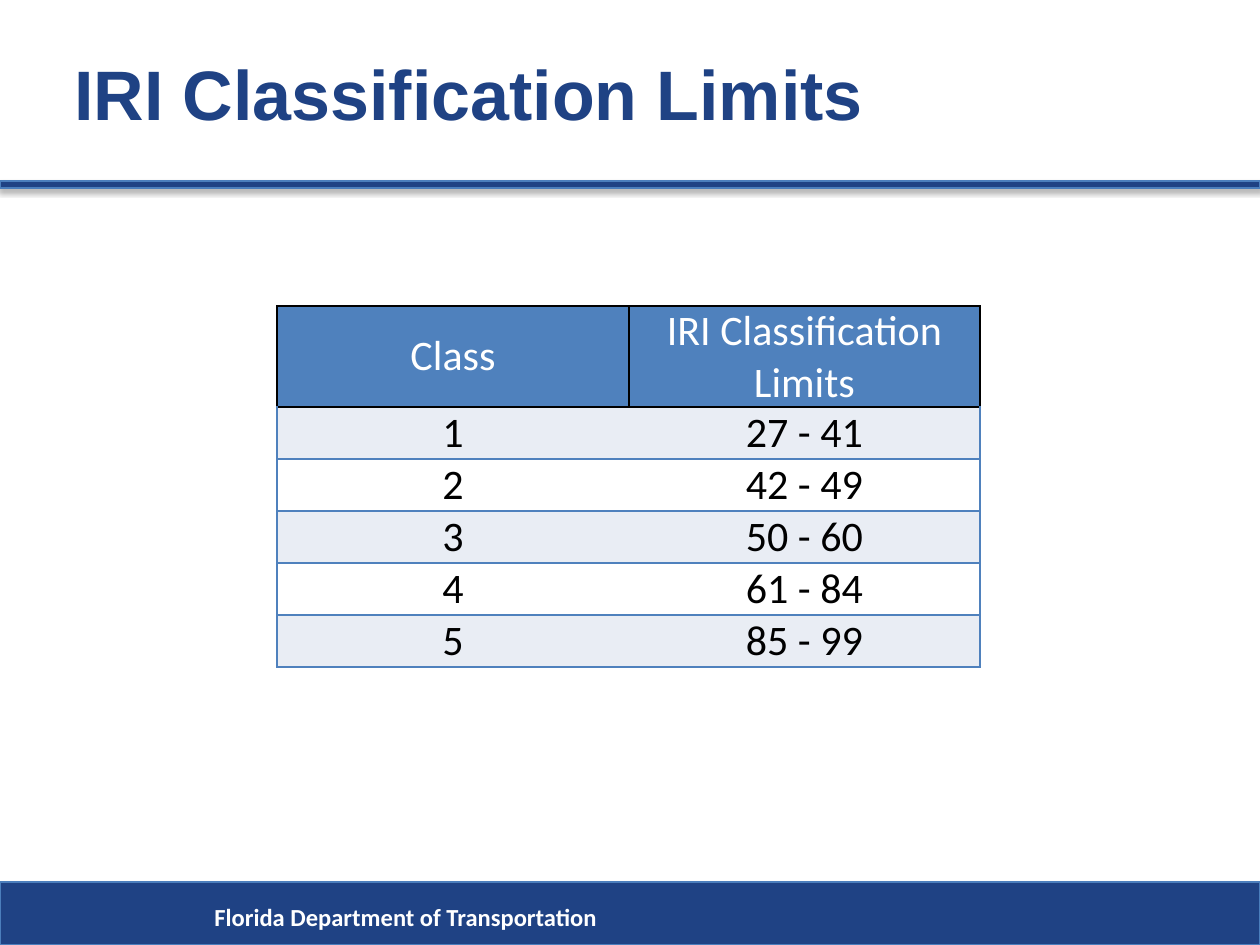
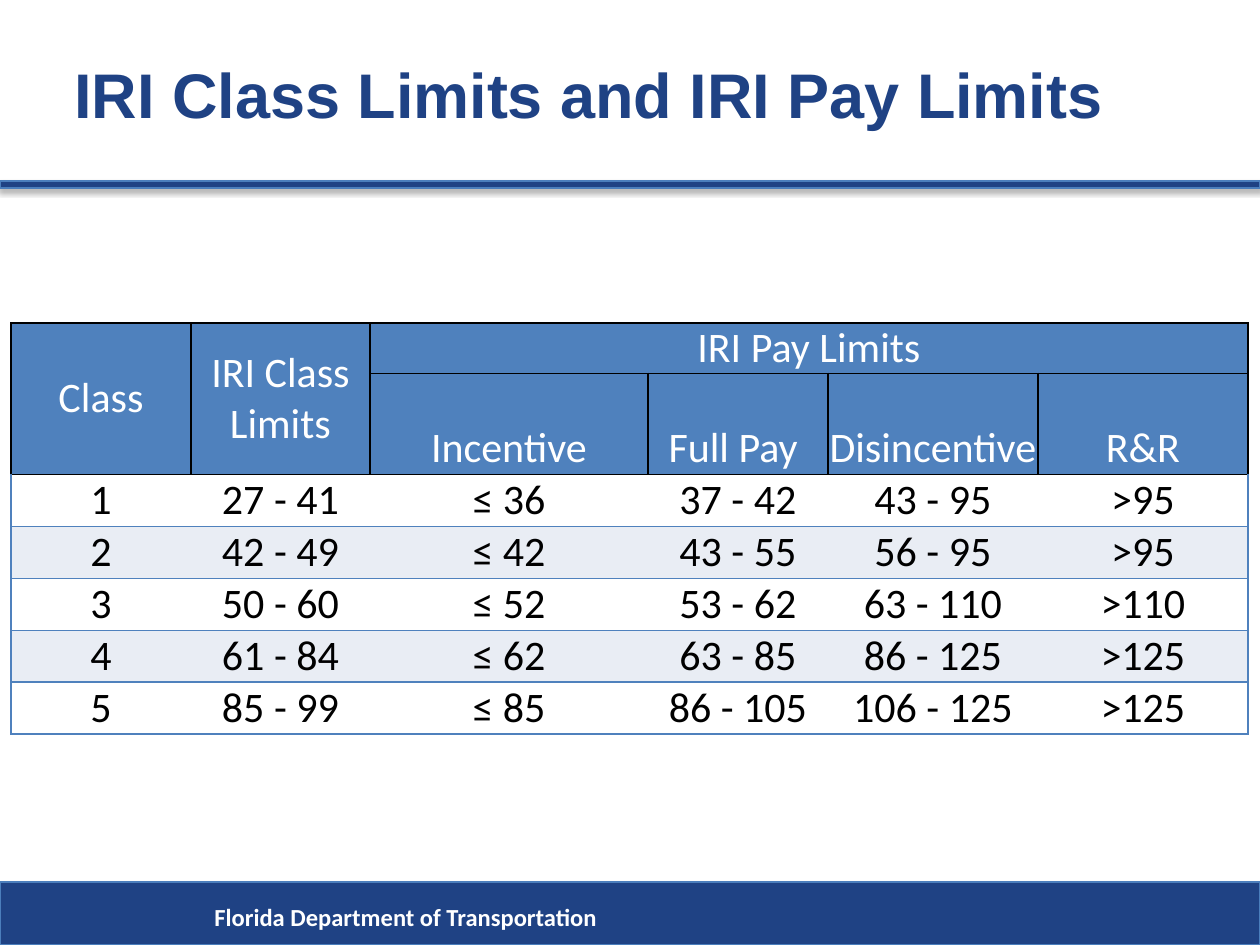
from lxml.etree import SubElement
from pptx import Presentation
from pptx.dml.color import RGBColor
from pptx.enum.shapes import MSO_SHAPE
from pptx.enum.text import MSO_ANCHOR, MSO_AUTO_SIZE, PP_ALIGN
from pptx.oxml import parse_xml
from pptx.oxml.ns import nsdecls, qn
from pptx.util import Emu, Pt

# Shared look
NAVY, BLUE, EDGE = "1F4284", "4F81BD", "4B7EBC"
PALE, WHITE, BLACK = "E9EDF4", "FFFFFF", "000000"
TITLE = {"name": "Arial", "bold": True}
FOOT = {"name": "Calibri", "size": Pt(14), "bold": True}
CELL = {"name": "Calibri", "size": Pt(24), "bold": False}
TIGHT = {"margin_left": 0, "margin_right": 0, "margin_top": 0, "margin_bottom": 0}
WIDE, TALL, ROW = 1260, 945, 52

# Class, class limits, then the four pay limits
LIMITS = [
    ("1", "27 - 41", "≤ 36", "37 - 42", "43 - 95", ">95"),
    ("2", "42 - 49", "≤ 42", "43 - 55", "56 - 95", ">95"),
    ("3", "50 - 60", "≤ 52", "53 - 62", "63 - 110", ">110"),
    ("4", "61 - 84", "≤ 62", "63 - 85", "86 - 125", ">125"),
    ("5", "85 - 99", "≤ 85", "86 - 105", "106 - 125", ">125"),
]


def px(n):
    return Emu(round(n * 914400 / 126))


def tint(code):
    return RGBColor.from_string(code)


def apply(item, values):
    for name, value in values.items():
        setattr(item, name, value)


def write(para, text, style, color):
    run = para.add_run()
    run.text = text
    apply(run.font, style)
    run.font.color.rgb = tint(color)


def band(slide, top, height):
    """Full-width navy bar with a soft shadow below it."""
    bar = slide.shapes.add_shape(
        MSO_SHAPE.RECTANGLE, *map(px, (0, top, WIDE, height)))
    bar.fill.solid()
    bar.fill.fore_color.rgb = tint(NAVY)
    bar.line.color.rgb = tint(EDGE)
    bar.line.width = Pt(0.75)
    bar.shadow.inherit = False
    glow = SubElement(
        bar.element.spPr.find(qn("a:effectLst")), qn("a:outerShdw"),
        blurRad=str(Pt(3.1)), dist=str(Pt(1.8)), dir="5400000", rotWithShape="0")
    shade = SubElement(glow, qn("a:srgbClr"), val=BLACK)
    SubElement(shade, qn("a:alpha"), val="35000")


def label(slide, spot, text, style, color, frame):
    box = slide.shapes.add_textbox(*map(px, spot)).text_frame
    apply(box, {"word_wrap": True, **frame})
    write(box.paragraphs[0], text, style, color)


def base(deck, title, size):
    """Blank slide with the shared bands, footer and title."""
    slide = deck.slides.add_slide(deck.slide_layouts[6])
    band(slide, 181, 7)
    band(slide, 882, 63)
    label(slide, (202, 896, 1005, 43), "Florida Department of Transportation",
          FOOT, WHITE, {"auto_size": MSO_AUTO_SIZE.SHAPE_TO_FIT_TEXT})
    label(slide, (62, 14, 1134, 158), title, {**TITLE, "size": Pt(size)},
          NAVY, {"vertical_anchor": MSO_ANCHOR.MIDDLE})
    return slide


def border(cell, sides):
    """Draw the L, R, T and B edges; None leaves an edge clear."""
    props = cell._tc.get_or_add_tcPr()
    for spot, (side, color) in enumerate(sides.items()):
        paint = (f'<a:solidFill><a:srgbClr val="{color}"/></a:solidFill>'
                 if color else "<a:noFill/>")
        props.insert(spot, parse_xml(
            f'<a:ln{side} {nsdecls("a")} w="{Pt(1)}">{paint}</a:ln{side}>'))


def grid(slide, left, top, cols, head, high, body, fills, low=None):
    """Table with header rows; headings from column low on sit at the bottom."""
    rows = head + body
    sizes = high + [ROW] * len(body)
    spot = map(px, (left, top, sum(cols), sum(sizes)))
    table = slide.shapes.add_table(len(rows), len(cols), *spot).table
    apply(table, {"first_row": False, "horz_banding": False})
    for col, size in zip(table.columns, cols):
        col.width = px(size)
    for row, size in zip(table.rows, sizes):
        row.height = px(size)

    last = len(cols) - 1
    for r, texts in enumerate(rows):
        step = r - len(head)
        top_row = step < 0
        for c, text in enumerate(texts):
            cell = table.cell(r, c)
            sink = top_row and low is not None and c >= low
            apply(cell, {**TIGHT, "vertical_anchor":
                         MSO_ANCHOR.BOTTOM if sink else MSO_ANCHOR.MIDDLE})
            cell.fill.solid()
            cell.fill.fore_color.rgb = tint(BLUE if top_row else fills[step % 2])
            if top_row:
                border(cell, dict.fromkeys("LRTB", BLACK))
            else:
                border(cell, {"L": BLUE if c == 0 else None,
                              "R": BLUE if c == last else None,
                              "T": BLACK if step == 0 else BLUE, "B": BLUE})
            if text:
                para = cell.text_frame.paragraphs[0]
                para.alignment = PP_ALIGN.CENTER
                write(para, text, CELL, WHITE if top_row else BLACK)
    return table


def main():
    deck = Presentation()
    apply(deck, {"slide_width": px(WIDE), "slide_height": px(TALL)})

    # Class limits alone
    slide = base(deck, "IRI Classification Limits", 40)
    grid(slide, 277, 306, [352, 351], [("Class", "IRI Classification Limits")],
         [101], [row[:2] for row in LIMITS], (PALE, WHITE))

    # Class limits beside pay limits
    slide = base(deck, "IRI Class Limits and IRI Pay Limits", 36)
    head = [("Class", "IRI Class Limits", "IRI Pay Limits", "", "", ""),
            ("", "", "Incentive", "Full Pay ", "Disincentive", "R&R")]
    table = grid(slide, 11, 323, [180, 179, 278, 180, 210, 210], head,
                 [49, ROW], LIMITS, (WHITE, PALE), low=2)
    for start, end in (((0, 0), (1, 0)), ((0, 1), (1, 1)), ((0, 2), (0, 5))):
        table.cell(*start).merge(table.cell(*end))

    deck.save("out.pptx")


if __name__ == "__main__":
    main()
